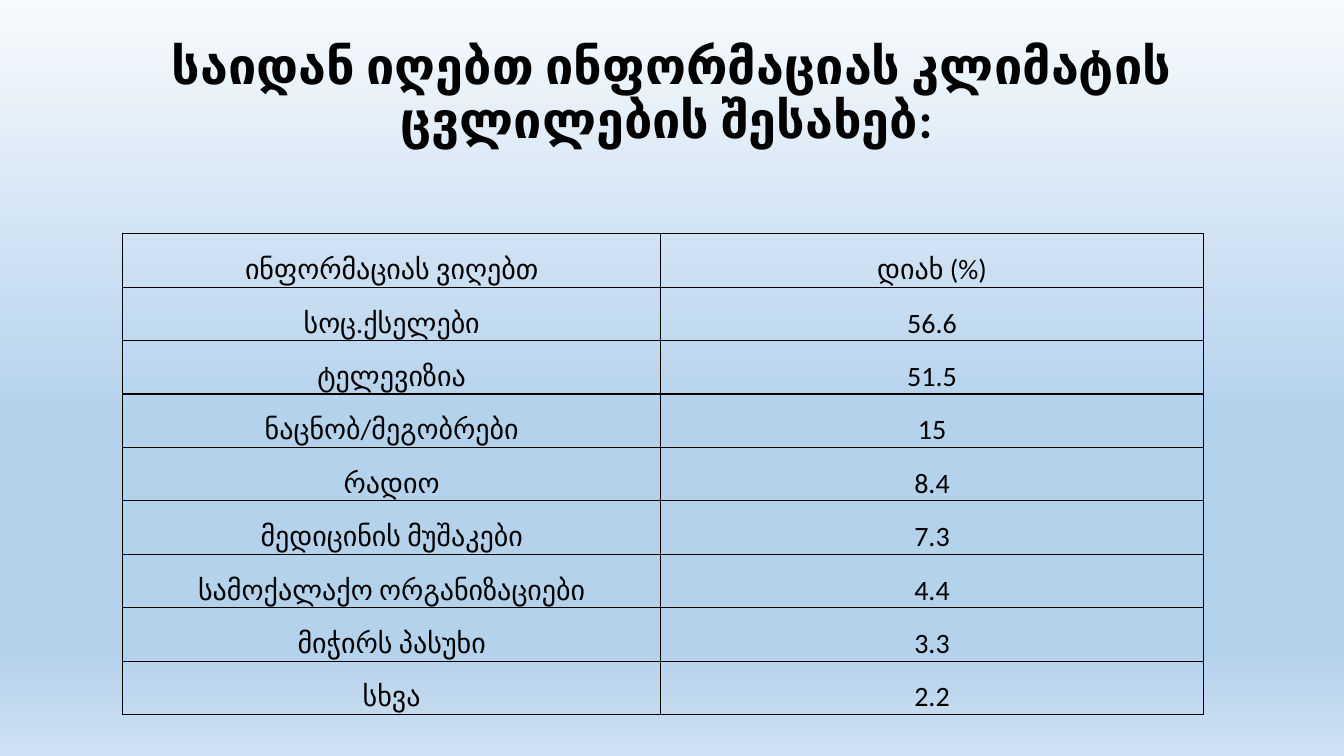
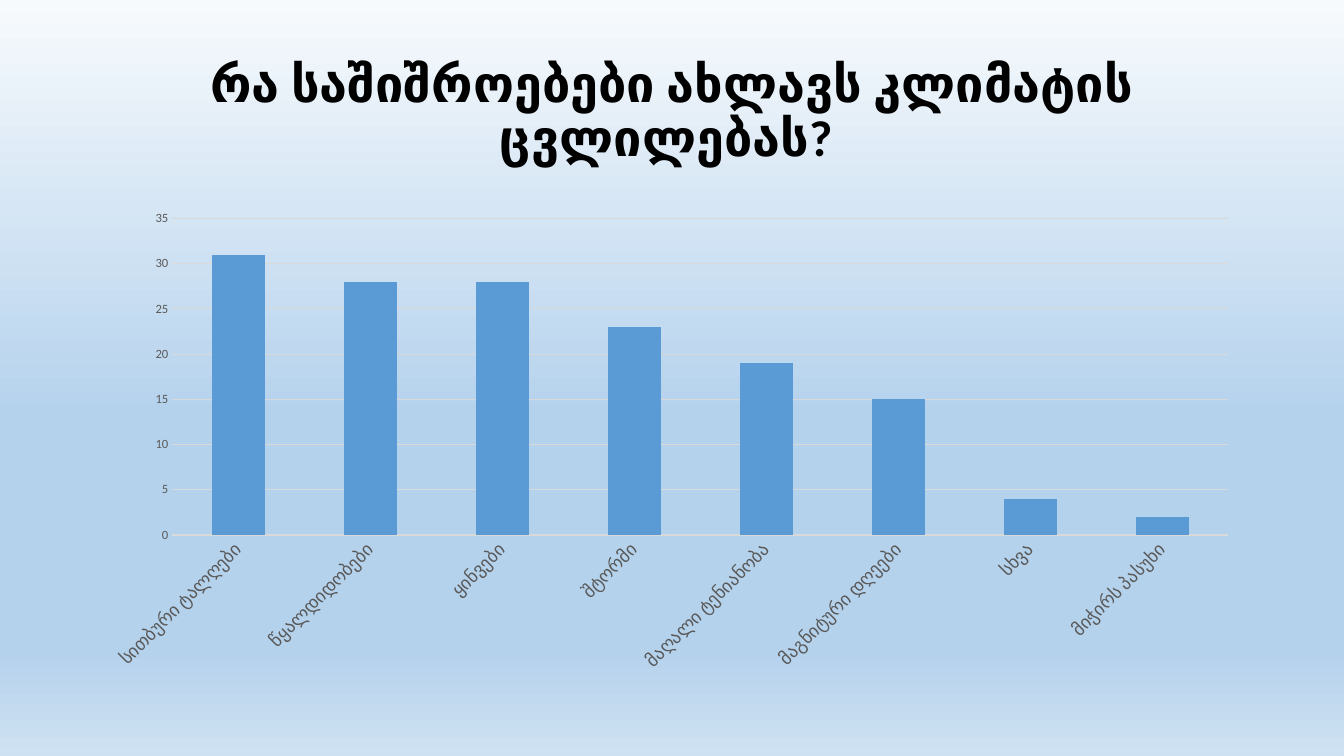
"""Build two survey slides on climate change: information sources and perceived dangers."""
import dataclasses

import pptx
import pptx.chart.data
import pptx.dml.color
import pptx.enum.chart
import pptx.enum.text
import pptx.oxml
import pptx.oxml.ns
import pptx.util
from pptx.util import Pt


@dataclasses.dataclass(frozen=True)
class Theme:
    """Colours, font and type sizes shared by the slides."""

    font: str = "Calibri"
    ink: str = "000000"
    axis_text: str = "595959"
    grid: str = "D9D9D9"
    bar: str = "5B9BD5"
    sky: tuple = ((0, "F7FAFD"), (55, "B5D2EC"), (86, "B5D2EC"), (100, "CEE1F2"))
    title_size: int = 36
    table_size: int = 20
    category_size: int = 13
    value_size: int = 9


THEME = Theme()
TITLE_ONLY = 5
LEFT, TITLE_TOP, WIDTH = 66, 28.8, 828

SOURCES = [
    ("ინფორმაციას ვიღებთ", "დიახ (%)"),
    ("სოც.ქსელები", "56.6"),
    ("ტელევიზია", "51.5"),
    ("ნაცნობ/მეგობრები", "15"),
    ("რადიო", "8.4"),
    ("მედიცინის მუშაკები", "7.3"),
    ("სამოქალაქო ორგანიზაციები", "4.4"),
    ("მიჭირს პასუხი", "3.3"),
    ("სხვა", "2.2"),
]
DANGERS = {
    "სითბური ტალღები": 31,
    "წყალდიდობები": 28,
    "ყინვები": 28,
    "შტორმი": 23,
    "მაღალი ტენიანობა": 19,
    "მაგნიტური დღეები": 15,
    "სხვა": 4,
    "მიჭირს პასუხი": 2,
}


def rgb(value):
    """Return the colour object for a hex string."""
    return pptx.dml.color.RGBColor.from_string(value)


def style_font(font, size, color, bold=False):
    """Apply the theme font with a size, colour and weight."""
    font.name = THEME.font
    font.size = Pt(size)
    font.bold = bold
    font.color.rgb = rgb(color)


def xml(markup):
    """Parse a DrawingML fragment whose root lacks its namespace."""
    tag, rest = markup.split(" ", 1)
    return pptx.oxml.parse_xml(f"{tag} {pptx.oxml.ns.nsdecls('a')} {rest}")


def paint_background(master):
    """Give the master the vertical sky gradient."""
    fill = master.background.fill
    fill.gradient()
    fill.gradient_angle = 270
    stops = next(master.element.iter(pptx.oxml.ns.qn("a:gsLst")))
    for stop in list(stops):
        stops.remove(stop)
    for percent, color in THEME.sky:
        stops.append(xml(f'<a:gs pos="{percent * 1000}"><a:srgbClr val="{color}"/></a:gs>'))


def add_titled_slide(prs, text, height):
    """Add a title-only slide with a centred bold title."""
    slide = prs.slides.add_slide(prs.slide_layouts[TITLE_ONLY])
    title = slide.shapes.title
    title.left, title.top, title.width, title.height = map(Pt, (LEFT, TITLE_TOP, WIDTH, height))
    frame = title.text_frame
    frame.text = text
    frame.word_wrap = True
    frame.auto_size = pptx.enum.text.MSO_AUTO_SIZE.NONE
    frame.vertical_anchor = pptx.enum.text.MSO_ANCHOR.MIDDLE
    heading = frame.paragraphs[0]
    heading.alignment = pptx.enum.text.PP_ALIGN.CENTER
    heading.line_spacing = 0.9
    style_font(heading.font, THEME.title_size, THEME.ink, bold=True)
    return slide


def fill_cell(cell, text):
    """Write one outlined, unfilled cell with text at its bottom."""
    cell.text = text
    cell.vertical_anchor = pptx.enum.text.MSO_ANCHOR.BOTTOM
    cell.margin_left = cell.margin_right = cell.margin_top = Pt(0.72)
    cell.margin_bottom = 0
    entry = cell.text_frame.paragraphs[0]
    entry.alignment = pptx.enum.text.PP_ALIGN.CENTER
    style_font(entry.font, THEME.table_size, THEME.ink)
    properties = cell._tc.get_or_add_tcPr()
    for side in "LRTB":
        properties.append(xml(
            f'<a:ln{side} w="{Pt(1)}"><a:solidFill><a:srgbClr val="{THEME.ink}"/>'
            f'</a:solidFill></a:ln{side}>'))
    cell.fill.background()


def add_table(slide, rows, left, top, column_widths, row_height):
    """Add a plain ruled table with equal rows."""
    table = slide.shapes.add_table(
        len(rows), len(column_widths), Pt(left), Pt(top),
        Pt(sum(column_widths)), Pt(row_height * len(rows))).table
    table.first_row = table.horz_banding = False
    for column, width in zip(table.columns, column_widths):
        column.width = Pt(width)
    for row, texts in zip(table.rows, rows):
        row.height = Pt(row_height)
        for cell, text in zip(row.cells, texts):
            fill_cell(cell, text)


def style_axis(axis, size):
    """Remove an axis line and ticks and set its label font."""
    axis.major_tick_mark = axis.minor_tick_mark = pptx.enum.chart.XL_TICK_MARK.NONE
    axis.format.line.fill.background()
    style_font(axis.tick_labels.font, size, THEME.axis_text)


def add_column_chart(slide, values, left, top, width, height):
    """Add a single-series column chart with slanted category labels."""
    data = pptx.chart.data.CategoryChartData()
    data.categories = list(values)
    data.add_series("Series 1", list(values.values()))
    chart = slide.shapes.add_chart(
        pptx.enum.chart.XL_CHART_TYPE.COLUMN_CLUSTERED,
        Pt(left), Pt(top), Pt(width), Pt(height), data).chart
    chart.has_legend = chart.has_title = False
    style_font(chart.font, 10, THEME.ink)

    plot = chart.plots[0]
    plot.gap_width = 150
    plot.vary_by_categories = False
    columns = plot.series[0].format.fill
    columns.solid()
    columns.fore_color.rgb = rgb(THEME.bar)

    categories, scale = chart.category_axis, chart.value_axis
    style_axis(categories, THEME.category_size)
    next(categories._element.iter(pptx.oxml.ns.qn("a:bodyPr"))).set("rot", "-2700000")
    style_axis(scale, THEME.value_size)
    scale.minimum_scale, scale.maximum_scale, scale.major_unit = 0, 35, 5
    scale.has_major_gridlines = True
    grid = scale.major_gridlines.format.line
    grid.width = Pt(0.75)
    grid.color.rgb = rgb(THEME.grid)


def main():
    """Build and save the presentation."""
    prs = pptx.Presentation()
    prs.slide_width, prs.slide_height = Pt(960), Pt(540)
    paint_background(prs.slide_master)

    sources = add_titled_slide(prs, "საიდან იღებთ ინფორმაციას კლიმატის ცვლილების შესახებ: ", 78.5)
    add_table(sources, SOURCES, 87.5, 167, (384.5, 387.5), 38.16)

    dangers = add_titled_slide(prs, "რა საშიშროებები ახლავს კლიმატის ცვლილებას? ", 104.4)
    add_column_chart(dangers, DANGERS, LEFT, 144, WIDTH, 342.7)

    prs.save("out.pptx")


if __name__ == "__main__":
    main()
